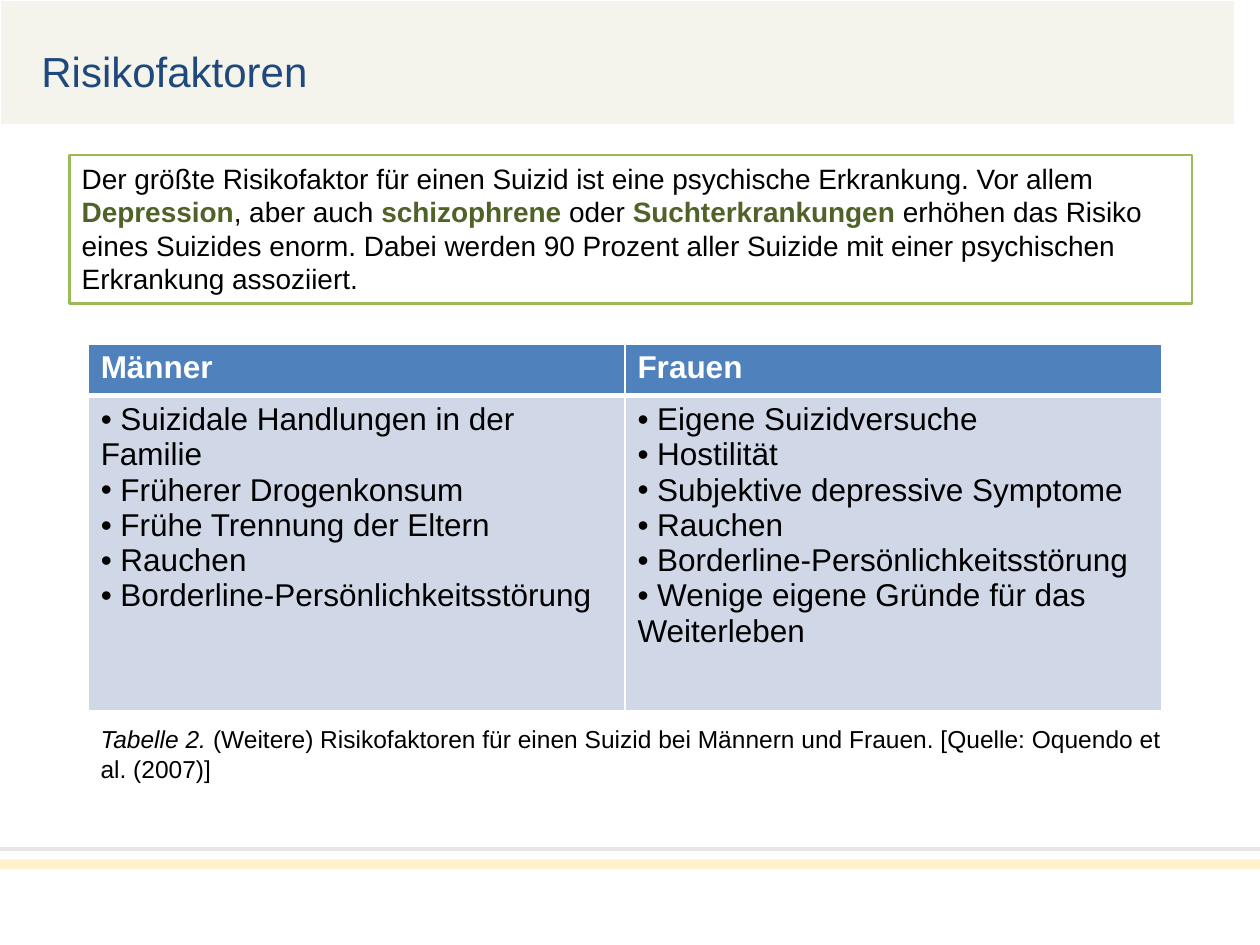
from collections import namedtuple
from dataclasses import dataclass

from lxml import etree
from pptx import Presentation
from pptx import util as u
from pptx.dml.color import RGBColor
from pptx.enum import shapes, text
from pptx.oxml import ns

# Grid of 100 columns by 75 rows on a 10 x 7.5 inch slide
COLS, ROWS, UNIT = 100, 75, 0.1
Box = namedtuple("Box", "x y w h")


@dataclass(frozen=True)
class Theme:
    font: str = "Arial"
    title: int = 24
    table: int = 18
    body: int = 16
    caption: int = 14
    ink: str = "000000"
    paper: str = "FFFFFF"
    navy: str = "1F497D"
    band: str = "F4F3EC"
    rule: str = "E7E6E6"
    cream: str = "FFF2CC"
    frame: str = "9BBB59"
    strong: str = "4F6228"
    head: str = "4F81BD"
    cell: str = "D0D8E8"


T = Theme()


def rgb(color):
    return RGBColor.from_string(color)


def grid(n):
    return u.Inches(n * UNIT)


def emu(box):
    return [grid(n) for n in box]


def sub(parent, tag, **attrs):
    return etree.SubElement(parent, ns.qn(tag), attrs)


def write(tf, paragraphs, size, color=T.ink, bold=False, italic=False, bullet=None):
    """Each paragraph is a list of runs: a string, or (string, overrides)."""
    tf.word_wrap = True
    for i, runs in enumerate(paragraphs):
        p = tf.paragraphs[0] if i == 0 else tf.add_paragraph()
        p.alignment = text.PP_ALIGN.LEFT
        if bullet:
            pPr = p._p.get_or_add_pPr()
            pPr.set("marL", "0")
            pPr.set("indent", "0")
            sub(pPr, "a:buFont", typeface=T.font)
            sub(pPr, "a:buChar", char=bullet)
        for run in runs:
            words, own = (run, {}) if isinstance(run, str) else run
            r = p.add_run()
            r.text = words
            r.font.name, r.font.size = T.font, u.Pt(size)
            r.font.color.rgb = rgb(own.get("color", color))
            r.font.bold = own.get("bold", bold)
            r.font.italic = own.get("italic", italic)


def rect(s, box, fill=None, line=None, width=0.75):
    sp = s.shapes.add_shape(shapes.MSO_SHAPE.RECTANGLE, *emu(box))
    sp.shadow.inherit = False
    if fill:
        sp.fill.solid()
        sp.fill.fore_color.rgb = rgb(fill)
    else:
        sp.fill.background()
    if line:
        sp.line.color.rgb = rgb(line)
        sp.line.width = u.Pt(width)
    else:
        sp.line.fill.background()
    return sp


def text_box(s, box, paragraphs, **fmt):
    write(s.shapes.add_textbox(*emu(box)).text_frame, paragraphs, **fmt)


def header(s, box, title):
    rect(s, box, T.band, T.paper)
    text_box(s, Box(box.x + 2.3, box.y + 3.1, 57.8, 5), [[title]],
             size=T.title, color=T.navy)


def footer(s, box):
    # Thin rule above a cream strip
    cx = s.shapes.add_connector(shapes.MSO_CONNECTOR.STRAIGHT, grid(box.x), grid(box.y),
                                grid(box.x + box.w), grid(box.y))
    cx.line.color.rgb = rgb(T.rule)
    cx.line.width = u.Pt(2)
    sub(cx._element.spPr, "a:effectLst")
    rect(s, Box(box.x, box.y + box.h / 2, box.w, box.h / 2), T.cream)


def statement(s, box, runs):
    sp = rect(s, box, line=T.frame, width=1.5)
    sp.text_frame.vertical_anchor = text.MSO_ANCHOR.TOP
    write(sp.text_frame, [runs], size=T.body)


def style_cell(cell, fill, **widths):
    cell.fill.solid()
    cell.fill.fore_color.rgb = rgb(fill)
    tcPr = cell._tc.get_or_add_tcPr()
    for i, side in enumerate("LRTB"):
        ln = sub(tcPr, f"a:ln{side}", w=str(u.Pt(widths.get(side, 1))))
        sub(sub(ln, "a:solidFill"), "a:srgbClr", val=T.paper)
        tcPr.insert(i, ln)


def factor_table(s, box, columns, head_h):
    tbl = s.shapes.add_table(2, len(columns), *emu(box)).table
    tbl.rows[0].height = grid(head_h)
    tbl.rows[1].height = grid(box.h - head_h)
    for i, (name, factors) in enumerate(columns.items()):
        tbl.columns[i].width = grid(box.w / len(columns))
        top, body = tbl.cell(0, i), tbl.cell(1, i)
        style_cell(top, T.head, B=3)
        write(top.text_frame, [[name]], size=T.table, color=T.paper, bold=True)
        style_cell(body, T.cell, T=3)
        write(body.text_frame, [[f" {factor}"] for factor in factors],
              size=T.table, bullet="•")


def main():
    prs = Presentation()
    prs.slide_width, prs.slide_height = grid(COLS), grid(ROWS)
    s = prs.slides.add_slide(prs.slide_layouts[6])

    header(s, Box(0, 0, 98, 9.9), "Risikofaktoren")
    footer(s, Box(0, 67.4, COLS, 1.6))

    # Risk factors by sex, with caption
    factor_table(s, Box(7, 27.3, 85.2, 29.1), {
        "Männer": ["Suizidale Handlungen in der Familie", "Früherer Drogenkonsum",
                   "Frühe Trennung der Eltern", "Rauchen",
                   "Borderline-Persönlichkeitsstörung"],
        "Frauen": ["Eigene Suizidversuche", "Hostilität",
                   "Subjektive depressive Symptome", "Rauchen",
                   "Borderline-Persönlichkeitsstörung",
                   "Wenige eigene Gründe für das Weiterleben"],
    }, head_h=4.1)
    text_box(s, Box(7, 57, 86.7, 5.7), [[
        ("Tabelle 2. ", {"italic": True}),
        "(Weitere) Risikofaktoren für einen Suizid bei Männern und Frauen. "
        "[Quelle: Oquendo et al. (2007)]"]], size=T.caption)

    # Framed key statement
    strong = {"color": T.strong, "bold": True}
    statement(s, Box(5.5, 12.3, 89.1, 11.8), [
        "Der größte Risikofaktor für einen Suizid ist eine psychische Erkrankung. Vor allem ",
        ("Depression", strong), ", aber auch ",
        ("schizophrene", strong), " oder ",
        ("Suchterkrankungen", strong),
        " erhöhen das Risiko eines Suizides enorm. Dabei werden 90 Prozent aller "
        "Suizide mit einer psychischen Erkrankung assoziiert."])

    prs.save("out.pptx")


if __name__ == "__main__":
    main()
